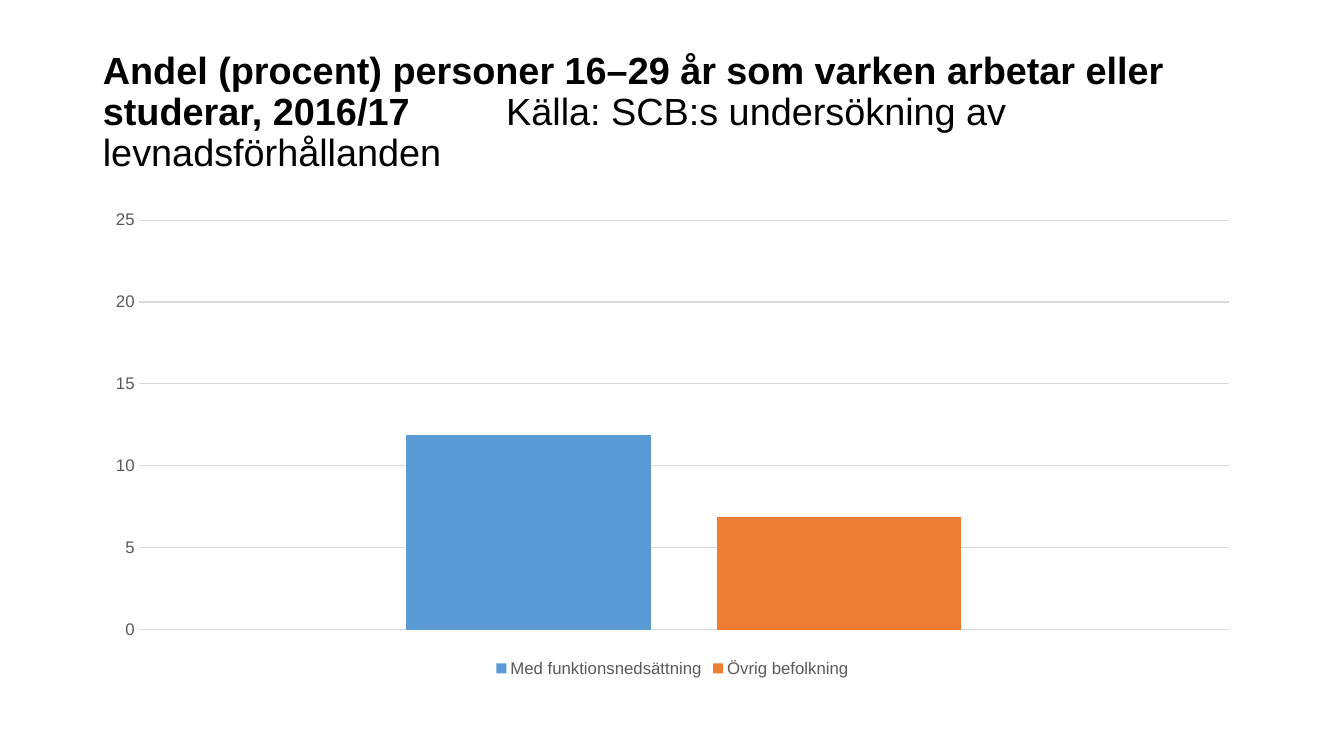
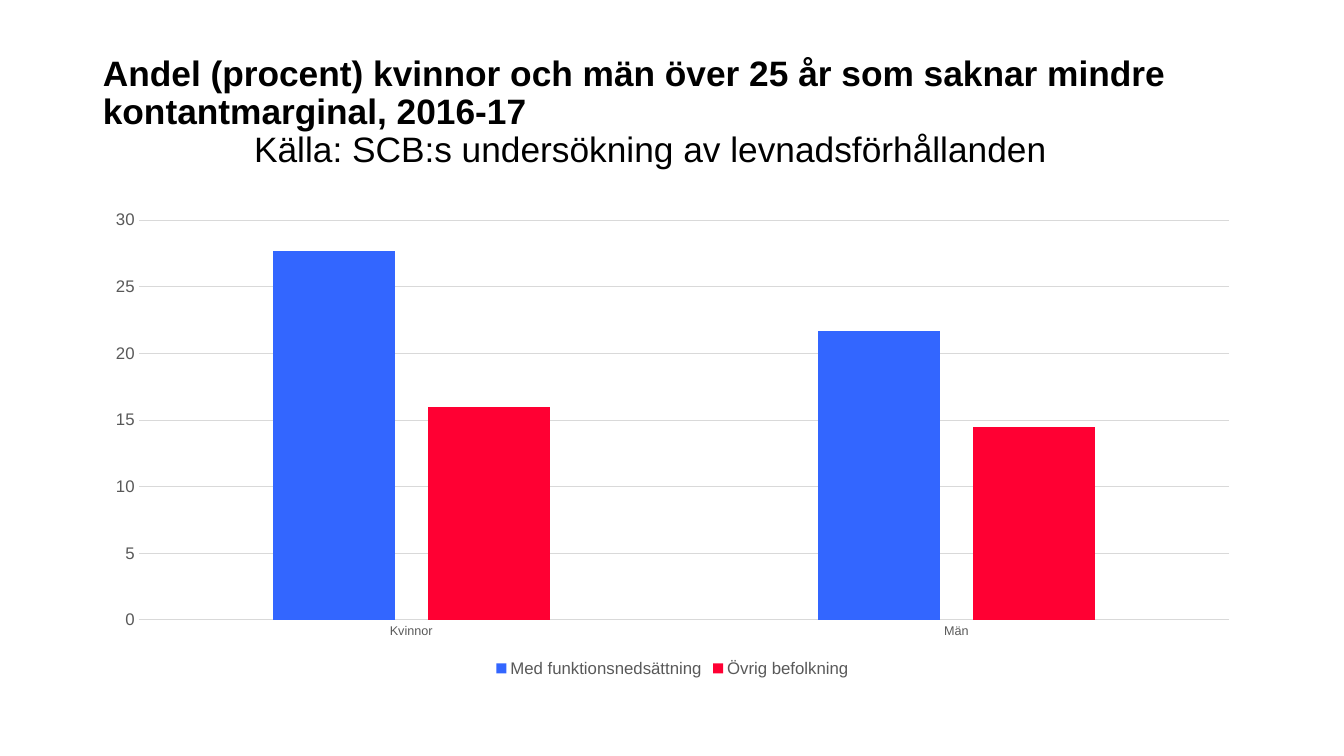
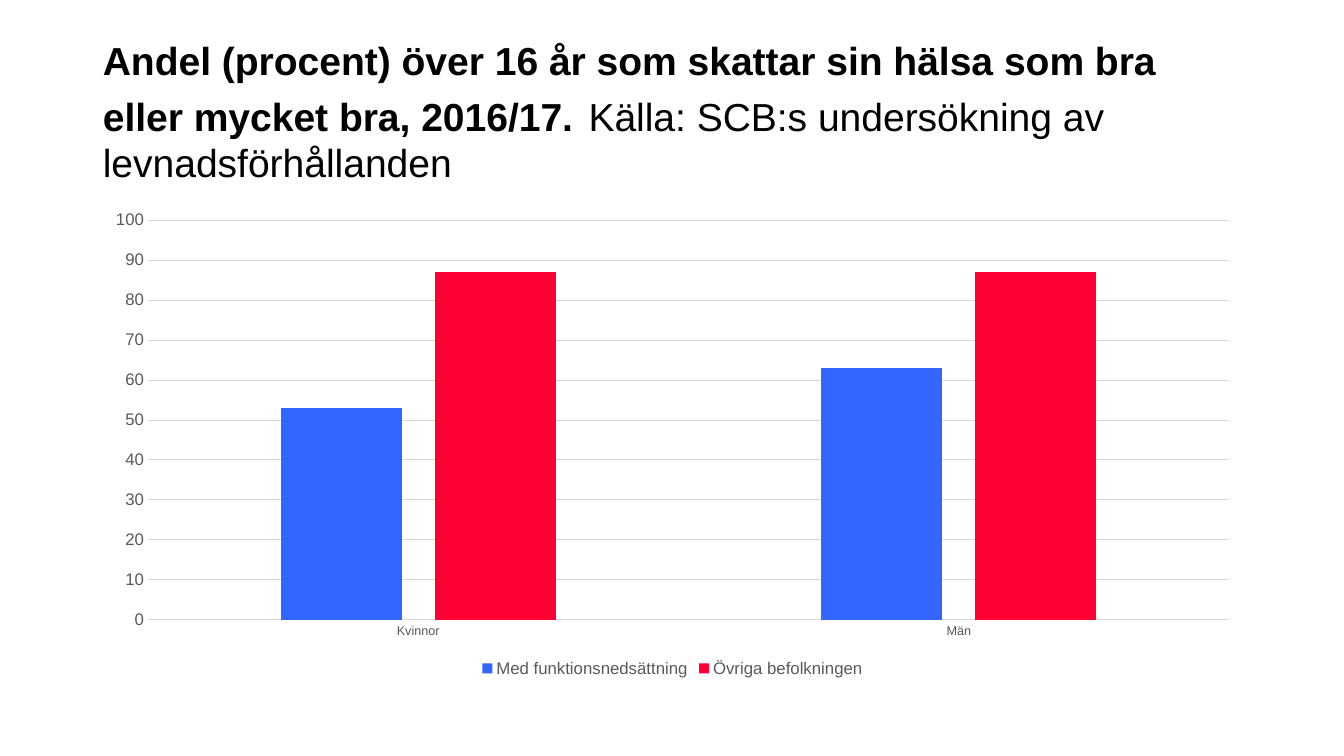
import pptx
import pptx.util
import pptx.chart.data
import pptx.dml.color
import pptx.enum.chart
import pptx.enum.text
import pptx.oxml.ns
from lxml import etree

Inches = pptx.util.Inches
Pt = pptx.util.Pt
RGBColor = pptx.dml.color.RGBColor

BLACK = RGBColor(0x00, 0x00, 0x00)
LABEL_GREY = RGBColor(0x59, 0x59, 0x59)
GRID_GREY = RGBColor(0xD9, 0xD9, 0xD9)
SOFT_BLUE = RGBColor(0x5B, 0x9B, 0xD5)
ORANGE = RGBColor(0xED, 0x7D, 0x31)
BLUE = RGBColor(0x33, 0x66, 0xFF)
RED = RGBColor(0xFF, 0x00, 0x33)

FONT = "Arial"
TITLE_BOX = (Inches(0.92), Inches(0.4), Inches(11.3), Inches(1.45))
CHART_BOX = (Inches(0.92), Inches(2), Inches(11.5), Inches(4.76))
SOURCE = "Källa: SCB:s undersökning av levnadsförhållanden"
DISABLED = "Med funktionsnedsättning"
GENDERS = ("Kvinnor", "Män")

SLIDES = (
    {
        "heading": "Andel (procent) personer 16–29 år som varken arbetar eller studerar, 2016/17",
        "size": 27, "gap": "\t\t", "gap_size": 24, "source_below": False,
        "categories": ("1",), "show_categories": False, "maximum": 25,
        "groups": ((DISABLED, (11.9,), SOFT_BLUE),
                   ("Övrig befolkning", (6.9,), ORANGE)),
    },
    {
        "heading": "Andel (procent) kvinnor och män över 25 år som saknar mindre kontantmarginal, 2016-17",
        "size": 25.2, "gap": "\t\t\t", "gap_size": 25.2, "source_below": True,
        "categories": GENDERS, "show_categories": True, "maximum": None,
        "groups": ((DISABLED, (27.7, 21.7), BLUE),
                   ("Övrig befolkning", (16, 14.5), RED)),
    },
    {
        "heading": "Andel (procent) över 16 år som skattar sin hälsa som bra eller mycket bra, 2016/17.",
        "size": 27.9, "gap": " ", "gap_size": 39.6, "source_below": False,
        "categories": GENDERS, "show_categories": True, "maximum": None,
        "groups": ((DISABLED, (53, 63), BLUE),
                   ("Övriga befolkningen", (87, 87), RED)),
    },
)


def set_font(font, size, color, bold=False):
    """Apply the shared typeface with a given size, colour and weight."""
    font.name = FONT
    font.size = Pt(size)
    font.color.rgb = color
    font.bold = bold


def place(shape, box):
    """Move a shape to a left, top, width, height box."""
    shape.left, shape.top, shape.width, shape.height = box


def break_line(paragraph, size):
    """Add a line break that has the size of the text around it."""
    paragraph.add_line_break()
    line_break = paragraph._p.findall(pptx.oxml.ns.qn("a:br"))[-1]
    etree.SubElement(line_break, pptx.oxml.ns.qn("a:rPr"), sz=str(round(size * 100)))


def fill_title(title, box, content):
    """Write the bold heading and its plain source in the title box."""
    place(title, box)
    frame = title.text_frame
    frame.word_wrap = True
    frame.auto_size = pptx.enum.text.MSO_AUTO_SIZE.NONE
    frame.vertical_anchor = pptx.enum.text.MSO_ANCHOR.MIDDLE
    paragraph = frame.paragraphs[0]
    paragraph.alignment = pptx.enum.text.PP_ALIGN.LEFT
    paragraph.line_spacing = 0.9
    size = content["size"]
    parts = ((content["heading"], size, True),
             (content["gap"], content["gap_size"], True),
             (SOURCE, size, False))
    for text, part_size, bold in parts:
        if text == content["gap"] and content["source_below"]:
            break_line(paragraph, size)
        run = paragraph.add_run()
        run.text = text
        set_font(run.font, part_size, BLACK, bold)


def style_axes(chart, content):
    """Give the value axis its grid and the category axis its baseline."""
    no_ticks = pptx.enum.chart.XL_TICK_MARK.NONE
    for axis, size in ((chart.value_axis, 12), (chart.category_axis, 9)):
        axis.major_tick_mark = axis.minor_tick_mark = no_ticks
        set_font(axis.tick_labels.font, size, LABEL_GREY)
    chart.value_axis.format.line.fill.background()
    chart.value_axis.has_major_gridlines = True
    chart.value_axis.maximum_scale = content["maximum"]
    chart.category_axis.has_major_gridlines = False
    chart.category_axis.visible = content["show_categories"]
    for line in (chart.value_axis.major_gridlines.format.line,
                 chart.category_axis.format.line):
        line.color.rgb = GRID_GREY
        line.width = Pt(0.75)


def add_column_chart(slide, box, content):
    """Draw the clustered columns with a legend below."""
    shares = pptx.chart.data.CategoryChartData()
    shares.categories = content["categories"]
    for name, values, _ in content["groups"]:
        shares.add_series(name, values)
    chart = slide.shapes.add_chart(
        pptx.enum.chart.XL_CHART_TYPE.COLUMN_CLUSTERED, *box, shares).chart
    set_font(chart.font, 10, BLACK)
    chart.has_title = False
    chart.has_legend = True
    chart.legend.position = pptx.enum.chart.XL_LEGEND_POSITION.BOTTOM
    chart.legend.include_in_layout = False
    set_font(chart.legend.font, 12, LABEL_GREY)
    columns = chart.plots[0]
    columns.vary_by_categories = False
    columns.gap_width = 219
    columns.overlap = -27
    for series, (_, _, color) in zip(columns.series, content["groups"]):
        series.format.fill.solid()
        series.format.fill.fore_color.rgb = color
    style_axes(chart, content)


def add_chart_slide(presentation, content):
    """Add one slide with a title and its chart."""
    slide = presentation.slides.add_slide(presentation.slide_layouts[5])
    fill_title(slide.shapes.title, TITLE_BOX, content)
    add_column_chart(slide, CHART_BOX, content)


def main():
    """Build and save the presentation."""
    presentation = pptx.Presentation()
    presentation.slide_width = Inches(13.33)
    presentation.slide_height = Inches(7.5)
    for content in SLIDES:
        add_chart_slide(presentation, content)
    presentation.save("out.pptx")


if __name__ == "__main__":
    main()
